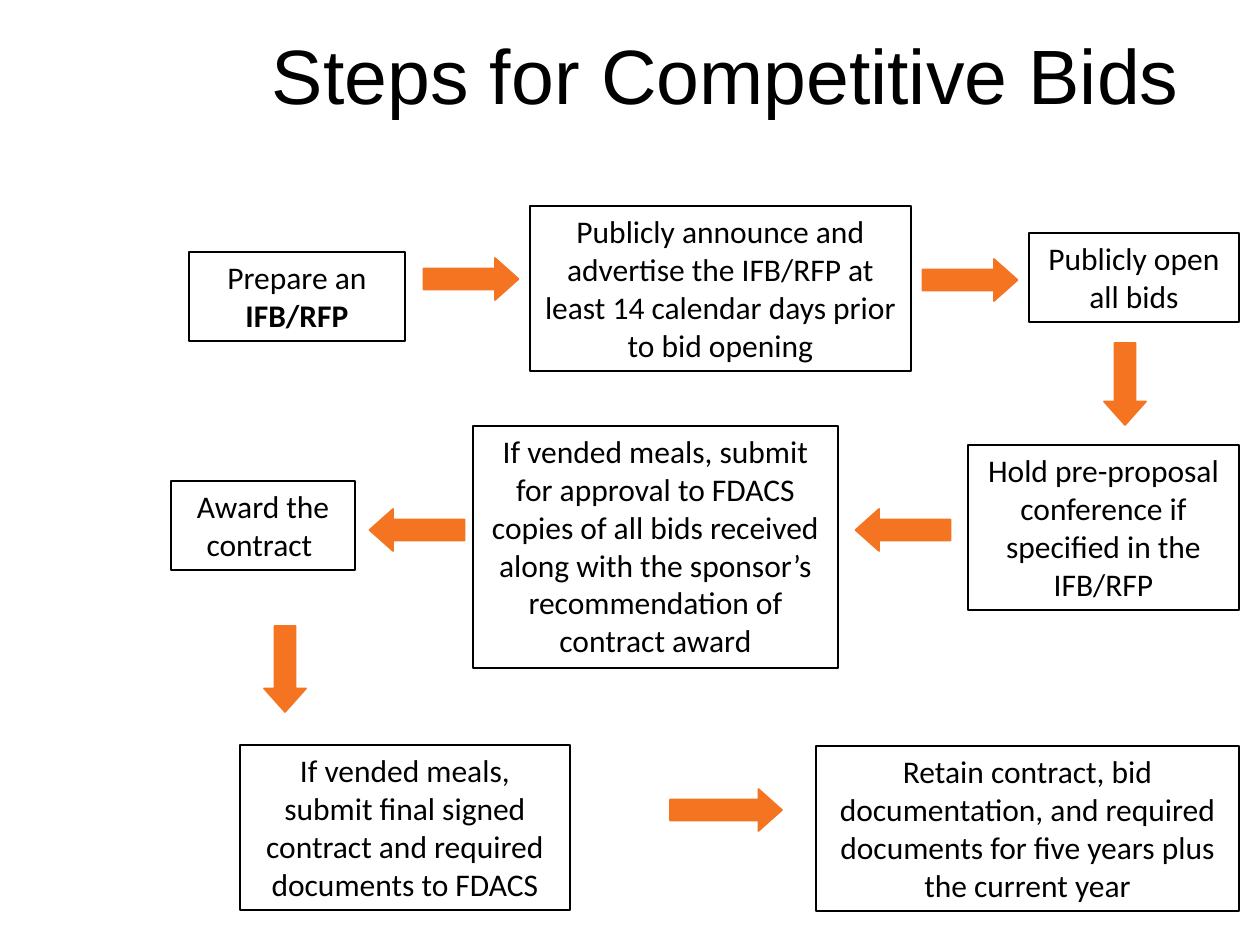
from dataclasses import dataclass

from pptx import Presentation
from pptx import util as u
from pptx.dml.color import RGBColor
from pptx.enum import shapes, text

EMU_PER_PX = 914400 / 126
RIGHT, DOWN, LEFT = 0, 90, 180
ARROW_LENGTH, ARROW_HEIGHT = 95, 42


@dataclass(frozen=True)
class Theme:
    ink: RGBColor = RGBColor(0, 0, 0)
    accent: RGBColor = RGBColor(0xF4, 0x74, 0x21)
    title_font: str = "Arial"
    body_font: str = "Calibri"
    title_size: int = 44
    body_size: int = 18
    line_width: int = 1


THEME = Theme()

# left, top, width, height, runs as (wording, bold)
STEPS = [
    (189, 252, 216, 89, [("Prepare an ", False), ("IFB/RFP", True)]),
    (530, 206, 381, 165, [("Publicly announce and advertise the IFB/RFP at least "
                           "14 calendar days prior to bid opening", False)]),
    (1029, 233, 210, 89, [("Publicly open all bids", False)]),
    (968, 445, 271, 165, [("Hold pre-proposal conference if specified in the IFB/RFP", False)]),
    (473, 426, 365, 242, [("If vended meals, submit for approval to FDACS copies of all bids "
                           "received along with the sponsor’s recommendation of contract award",
                           False)]),
    (171, 481, 184, 89, [("Award the contract ", False)]),
    (240, 745, 330, 165, [("If vended meals, submit final signed contract and required "
                           "documents to FDACS", False)]),
    (816, 746, 423, 165, [("Retain contract, bid documentation, and required documents "
                           "for five years plus the current year", False)]),
]

# centre x, centre y, length, direction
ARROWS = [
    (471, 279, ARROW_LENGTH, RIGHT),
    (970, 280, ARROW_LENGTH, RIGHT),
    (1125, 384, 82, DOWN),
    (903, 530, ARROW_LENGTH, LEFT),
    (417, 530, ARROW_LENGTH, LEFT),
    (285, 669, 86, DOWN),
    (726, 810, 112, RIGHT),
]


def px(length):
    return u.Emu(round(length * EMU_PER_PX))


def add_span(para, wording, font, size, bold=False):
    span = para.add_run()
    span.text = wording
    span.font.name = font
    span.font.size = u.Pt(size)
    span.font.bold = bold
    span.font.color.rgb = THEME.ink


def set_title(page, wording):
    title = page.shapes.title
    title.left, title.top, title.width, title.height = map(px, (252, 20, 948, 107))
    title.text_frame.vertical_anchor = text.MSO_ANCHOR.MIDDLE
    para = title.text_frame.paragraphs[0]
    para.alignment = text.PP_ALIGN.CENTER
    add_span(para, wording, THEME.title_font, THEME.title_size)


def add_outlined(page, kind, bounds, line_color):
    shape = page.shapes.add_shape(kind, *map(px, bounds))
    shape.shadow.inherit = False
    shape.line.color.rgb = line_color
    shape.line.width = u.Pt(THEME.line_width)
    return shape


def add_step(page, left, top, width, height, runs):
    box = add_outlined(page, shapes.MSO_SHAPE.RECTANGLE, (left, top, width, height), THEME.ink)
    box.fill.background()
    frame = box.text_frame
    frame.word_wrap = True
    frame.auto_size = text.MSO_AUTO_SIZE.SHAPE_TO_FIT_TEXT
    frame.vertical_anchor = text.MSO_ANCHOR.TOP
    para = frame.paragraphs[0]
    para.alignment = text.PP_ALIGN.CENTER
    for wording, bold in runs:
        add_span(para, wording, THEME.body_font, THEME.body_size, bold)


def add_arrow(page, center_x, center_y, length, direction):
    bounds = (center_x - length / 2, center_y - ARROW_HEIGHT / 2, length, ARROW_HEIGHT)
    arrow = add_outlined(page, shapes.MSO_SHAPE.RIGHT_ARROW, bounds, THEME.accent)
    arrow.fill.solid()
    arrow.fill.fore_color.rgb = THEME.accent
    arrow.adjustments[0] = 0.5
    arrow.adjustments[1] = 0.56
    arrow.rotation = direction


def main():
    deck = Presentation()
    deck.slide_width, deck.slide_height = u.Inches(10), u.Inches(7.5)
    page = deck.slides.add_slide(deck.slide_layouts.get_by_name("Title Only"))
    set_title(page, "Steps for Competitive Bids")
    for step in STEPS:
        add_step(page, *step)
    for arrow in ARROWS:
        add_arrow(page, *arrow)
    deck.save("out.pptx")


if __name__ == "__main__":
    main()
